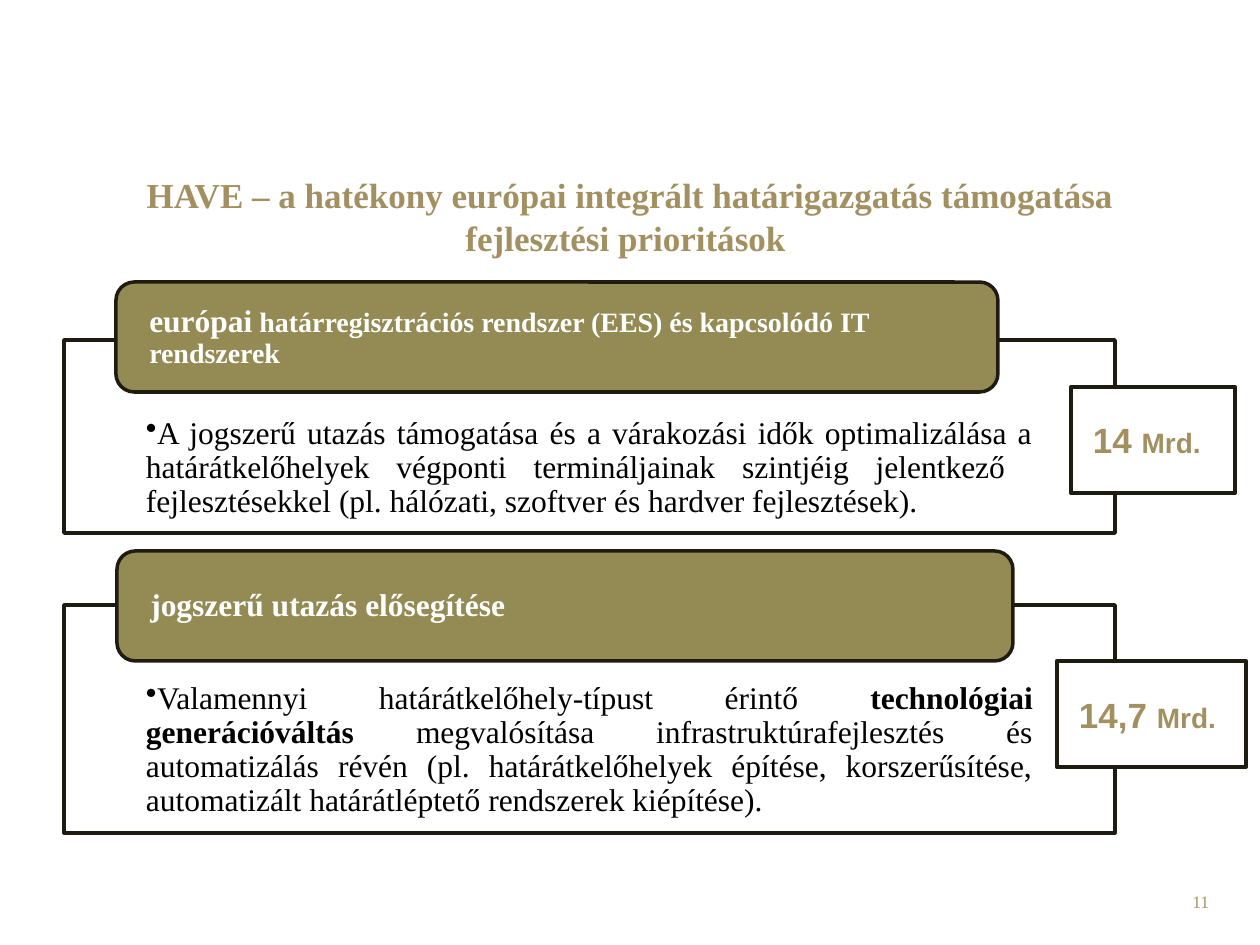
from dataclasses import dataclass

from lxml import etree
from pptx import Presentation
from pptx.dml.color import RGBColor
from pptx.enum.shapes import MSO_SHAPE
from pptx.enum.text import MSO_ANCHOR, PP_ALIGN
from pptx.oxml.ns import qn
from pptx.util import Emu, Pt

RECT, ROUND_RECT = MSO_SHAPE.RECTANGLE, MSO_SHAPE.ROUNDED_RECTANGLE
TOP, MIDDLE = MSO_ANCHOR.TOP, MSO_ANCHOR.MIDDLE
LEFT, CENTER, RIGHT, JUSTIFY = (
    PP_ALIGN.LEFT, PP_ALIGN.CENTER, PP_ALIGN.RIGHT, PP_ALIGN.JUSTIFY)


@dataclass(frozen=True)
class Theme:
    serif: str = "Times New Roman"
    sans: str = "Arial"
    gold: str = "A29061"
    pale_gold: str = "A69765"
    olive: str = "948A54"
    outline: str = "1E1C11"
    black: str = "000000"
    white: str = "FFFFFF"
    large: int = 20
    body: int = 18
    small: int = 16
    number: int = 10


T = Theme()
BODY_LEFT, BODY_WIDTH = 64, 1051
HEADER_HEIGHT, BADGE_HEIGHT = 110, 106

# Runs are (text, size, bold)
PRIORITIES = [
    dict(
        header=[("európai", T.body, True),
                (" határregisztrációs rendszer (EES) és kapcsolódó IT rendszerek",
                 T.small, True)],
        header_box=(116, 282, 882, HEADER_HEIGHT),
        body=[("A jogszerű utazás támogatása és a várakozási idők optimalizálása "
               "a határátkelőhelyek végponti termináljainak szintjéig jelentkező  "
               "fejlesztésekkel (pl. hálózati, szoftver és hardver fejlesztések).",
               T.body, False)],
        body_box=(BODY_LEFT, 340, BODY_WIDTH, 193),
        amount="14 ",
        badge_box=(1071, 387, 164, BADGE_HEIGHT),
    ),
    dict(
        header=[("jogszerű utazás elősegítése", T.body, True)],
        header_box=(117, 551, 896, HEADER_HEIGHT),
        body=[("Valamennyi határátkelőhely-típust érintő ", T.body, False),
              ("technológiai generációváltás ", T.body, True),
              ("megvalósítása infrastruktúrafejlesztés és automatizálás révén "
               "(pl. határátkelőhelyek építése, korszerűsítése, automatizált "
               "határátléptető rendszerek kiépítése).", T.body, False)],
        body_box=(BODY_LEFT, 605, BODY_WIDTH, 228),
        amount="14,7 ",
        badge_box=(1057, 661, 189, BADGE_HEIGHT),
    ),
]


def px(n):
    return Emu(round(n * 914400 / 126))


def rgb(color):
    return RGBColor.from_string(color)


def setup_frame(tf, insets, anchor=TOP):
    """Wrap the text and set left, top, right and bottom insets."""
    tf.word_wrap = True
    tf.vertical_anchor = anchor
    tf.margin_left, tf.margin_top, tf.margin_right, tf.margin_bottom = map(px, insets)


def write(p, runs, color, font=T.serif, align=LEFT, spacing=None):
    p.alignment = align
    p.line_spacing = spacing
    for text, size, bold in runs:
        r = p.add_run()
        r.text = text
        r.font.name = font
        r.font.size = Pt(size)
        r.font.bold = bold
        r.font.color.rgb = rgb(color)


def add_bullet(p):
    pPr = p._p.get_or_add_pPr()
    pPr.set("marL", "0")
    pPr.set("indent", "0")
    etree.SubElement(pPr, qn("a:buChar")).set("char", "•")


def add_box(s, kind, box, line_width, fill=None):
    sp = s.shapes.add_shape(kind, *map(px, box))
    sp.shadow.inherit = False
    if fill:
        sp.fill.solid()
        sp.fill.fore_color.rgb = rgb(fill)
    else:
        sp.fill.background()
    sp.line.color.rgb = rgb(T.outline)
    sp.line.width = Pt(line_width)
    return sp


def add_text(s, box, lines, color, align, insets):
    tf = s.shapes.add_textbox(*map(px, box)).text_frame
    setup_frame(tf, insets)
    for i, runs in enumerate(lines):
        p = tf.add_paragraph() if i else tf.paragraphs[0]
        write(p, runs, color, align=align)


def add_body(s, box, runs):
    tf = add_box(s, RECT, box, 2).text_frame
    setup_frame(tf, (82, 77, 82, 18))
    p = tf.paragraphs[0]
    add_bullet(p)
    write(p, runs, T.black, align=JUSTIFY, spacing=0.9)


def add_header(s, box, runs):
    tf = add_box(s, ROUND_RECT, box, 2, T.olive).text_frame
    setup_frame(tf, (28, 0, 28, 0), MIDDLE)
    write(tf.paragraphs[0], runs, T.white, spacing=0.9)


def add_badge(s, box, amount):
    tf = add_box(s, RECT, box, 2.5, T.white).text_frame
    setup_frame(tf, (22, 6, 6, 6), MIDDLE)
    runs = [(amount, T.large, True), ("Mrd.", T.small, True)]
    write(tf.paragraphs[0], runs, T.gold, font=T.sans)


def main():
    prs = Presentation()
    prs.slide_width, prs.slide_height = px(1260), px(945)
    s = prs.slides.add_slide(prs.slide_layouts[6])

    title = ["HAVE – a hatékony európai integrált határigazgatás támogatása",
             "fejlesztési prioritások "]
    add_text(s, (99, 174, 1062, 84), [[(line, T.large, True)] for line in title],
             T.gold, CENTER, (0, 0, 0, 0))
    for item in PRIORITIES:
        add_body(s, item["body_box"], item["body"])
        add_header(s, item["header_box"], item["header"])
    for item in PRIORITIES:
        add_badge(s, item["badge_box"], item["amount"])
    add_text(s, (929, 885, 293, 50), [[("11", T.number, False)]],
             T.pale_gold, RIGHT, (13, 6, 13, 6))

    prs.save("out.pptx")


if __name__ == "__main__":
    main()
